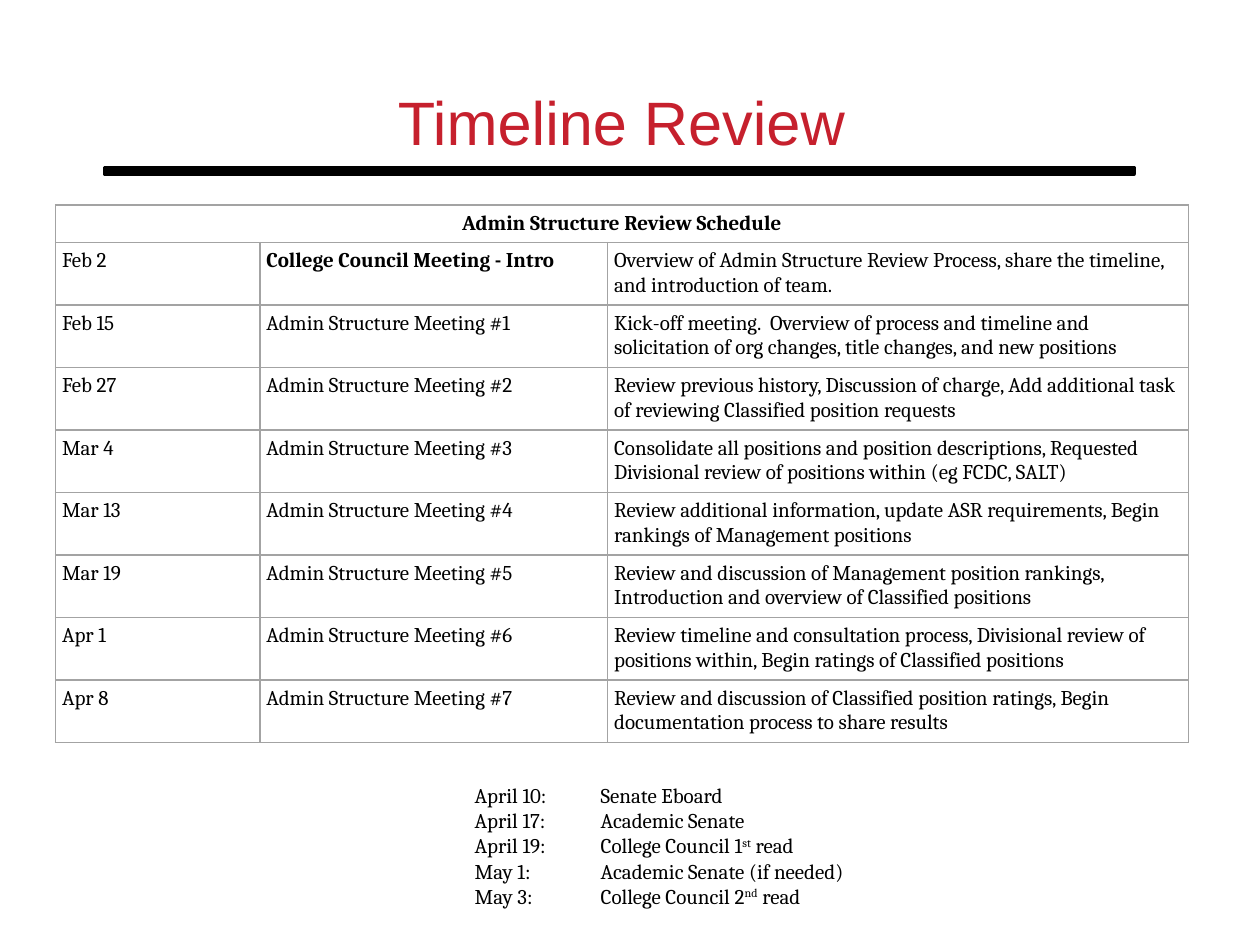
from lxml import etree
from pptx import Presentation, util as u
from pptx.dml.color import RGBColor
from pptx.enum import shapes, text
from pptx.oxml import ns

RED = RGBColor(0xC6, 0x20, 0x2D)
BLACK = RGBColor(0, 0, 0)
GRID_GRAY = RGBColor(0xA3, 0xA3, 0xA3)
BODY_FONT = "Cambria"
BODY_SIZE = 12

SCHEDULE_TITLE = "Admin Structure Review Schedule"
INTRO = ("Feb 2", "College Council Meeting - Intro",
         "Overview of Admin Structure Review Process, share the timeline, and introduction of team.")
MEETINGS = [
    ("Feb 15", "Kick-off meeting.  Overview of process and timeline and solicitation of org changes, "
               "title changes, and new positions"),
    ("Feb 27", "Review previous history, Discussion of charge, Add additional task of reviewing "
               "Classified position requests"),
    ("Mar 4", "Consolidate all positions and position descriptions, Requested Divisional review of "
              "positions within (eg FCDC, SALT)"),
    ("Mar 13", "Review additional information, update ASR requirements, Begin rankings of "
               "Management positions"),
    ("Mar 19", "Review and discussion of Management position rankings, Introduction and overview of "
               "Classified positions"),
    ("Apr 1", "Review timeline and consultation process, Divisional review of positions within, "
              "Begin ratings of Classified positions"),
    ("Apr 8", "Review and discussion of Classified position ratings, Begin documentation process "
              "to share results"),
]
# Date, then the event as pieces: plain, superscript, plain
NEXT_STEPS = [
    ("April 10:", ["Senate Eboard"]),
    ("April 17:", ["Academic Senate"]),
    ("April 19:", ["College Council 1", "st", " read"]),
    ("May 1:", ["Academic Senate (if needed)"]),
    ("May 3:", ["College Council 2", "nd", " read"]),
]


def format_font(font, name=BODY_FONT, size=BODY_SIZE, color=BLACK, bold=False):
    font.name = name
    font.size = u.Pt(size)
    font.color.rgb = color
    font.bold = bold


def set_title(slide, title):
    shape = slide.shapes.title
    shape.left, shape.top, shape.width, shape.height = (
        u.Cm(1.47), u.Cm(1.07), u.Cm(22.12), u.Cm(2.74))
    frame = shape.text_frame
    frame.text = title
    frame.auto_size = text.MSO_AUTO_SIZE.NONE
    frame.vertical_anchor = text.MSO_ANCHOR.MIDDLE
    paragraph = frame.paragraphs[0]
    paragraph.alignment = text.PP_ALIGN.CENTER
    format_font(paragraph.runs[0].font, "Arial", 35, RED)


def add_rule(slide):
    shape = slide.shapes.add_shape(
        shapes.MSO_SHAPE.RECTANGLE, u.Cm(2.11), u.Cm(3.38), u.Cm(20.75), u.Cm(0.13))
    shape.shadow.inherit = False
    shape.fill.solid()
    shape.fill.fore_color.rgb = BLACK
    shape.line.color.rgb = BLACK
    shape.line.width = u.Pt(2)
    etree.SubElement(shape.line._get_or_add_ln(), ns.qn("a:round"))


def add_borders(cell):
    properties = cell._tc.get_or_add_tcPr()
    for side in ("lnL", "lnR", "lnT", "lnB"):
        line = etree.SubElement(properties, ns.qn(f"a:{side}"), w=str(u.Pt(1)))
        fill = etree.SubElement(line, ns.qn("a:solidFill"))
        etree.SubElement(fill, ns.qn("a:srgbClr"), val=str(GRID_GRAY))


def format_cell(cell, content, bold=False, alignment=text.PP_ALIGN.LEFT):
    cell.text_frame.text = content
    cell.margin_left = cell.margin_right = cell.margin_top = cell.margin_bottom = u.Cm(0.13)
    paragraph = cell.text_frame.paragraphs[0]
    paragraph.alignment = alignment
    for run in paragraph.runs:
        format_font(run.font, bold=bold)
    add_borders(cell)
    cell.fill.background()


def add_schedule(slide):
    rows = [INTRO] + [(date, f"Admin Structure Meeting #{number}", task)
                      for number, (date, task) in enumerate(MEETINGS, 1)]
    widths = [4.12, 7.01, 11.71]
    heights = [0.76] + [1.26] * len(rows)
    table = slide.shapes.add_table(
        len(heights), len(widths), u.Cm(1.12), u.Cm(4.13),
        u.Cm(sum(widths)), u.Cm(sum(heights))).table
    table.first_row = table.horz_banding = False
    for column, width in zip(table.columns, widths):
        column.width = u.Cm(width)
    for row, height in zip(table.rows, heights):
        row.height = u.Cm(height)

    # Heading across all columns
    table.cell(0, 0).merge(table.cell(0, len(widths) - 1))
    for index in range(len(widths)):
        format_cell(table.cell(0, index), SCHEDULE_TITLE if index == 0 else "",
                    bold=True, alignment=text.PP_ALIGN.CENTER)
    # One row for each meeting
    for row_index, row in enumerate(rows, 1):
        for index, content in enumerate(row):
            format_cell(table.cell(row_index, index), content, bold=content == INTRO[1])


def add_next_steps(slide):
    frame = slide.shapes.add_textbox(
        u.Cm(9.32), u.Cm(15.65), u.Cm(8.46), u.Cm(2.82)).text_frame
    frame.word_wrap = True
    frame.auto_size = text.MSO_AUTO_SIZE.SHAPE_TO_FIT_TEXT
    for index, (date, pieces) in enumerate(NEXT_STEPS):
        paragraph = frame.add_paragraph() if index else frame.paragraphs[0]
        tabs = etree.SubElement(paragraph._p.get_or_add_pPr(), ns.qn("a:tabLst"))
        etree.SubElement(tabs, ns.qn("a:tab"), pos=str(u.Cm(2.54)), algn="l")
        for position, piece in enumerate(pieces):
            run = paragraph.add_run()
            run.text = piece if position else f"{date}\t{piece}"
            format_font(run.font)
            if position == 1:
                run._r.get_or_add_rPr().set("baseline", "30000")


def main():
    presentation = Presentation()
    presentation.slide_width = u.Cm(25.4)
    presentation.slide_height = u.Cm(19.05)
    slide = presentation.slides.add_slide(presentation.slide_layouts[5])
    set_title(slide, "Timeline Review")
    add_schedule(slide)
    add_rule(slide)
    add_next_steps(slide)
    presentation.save("out.pptx")


if __name__ == "__main__":
    main()
